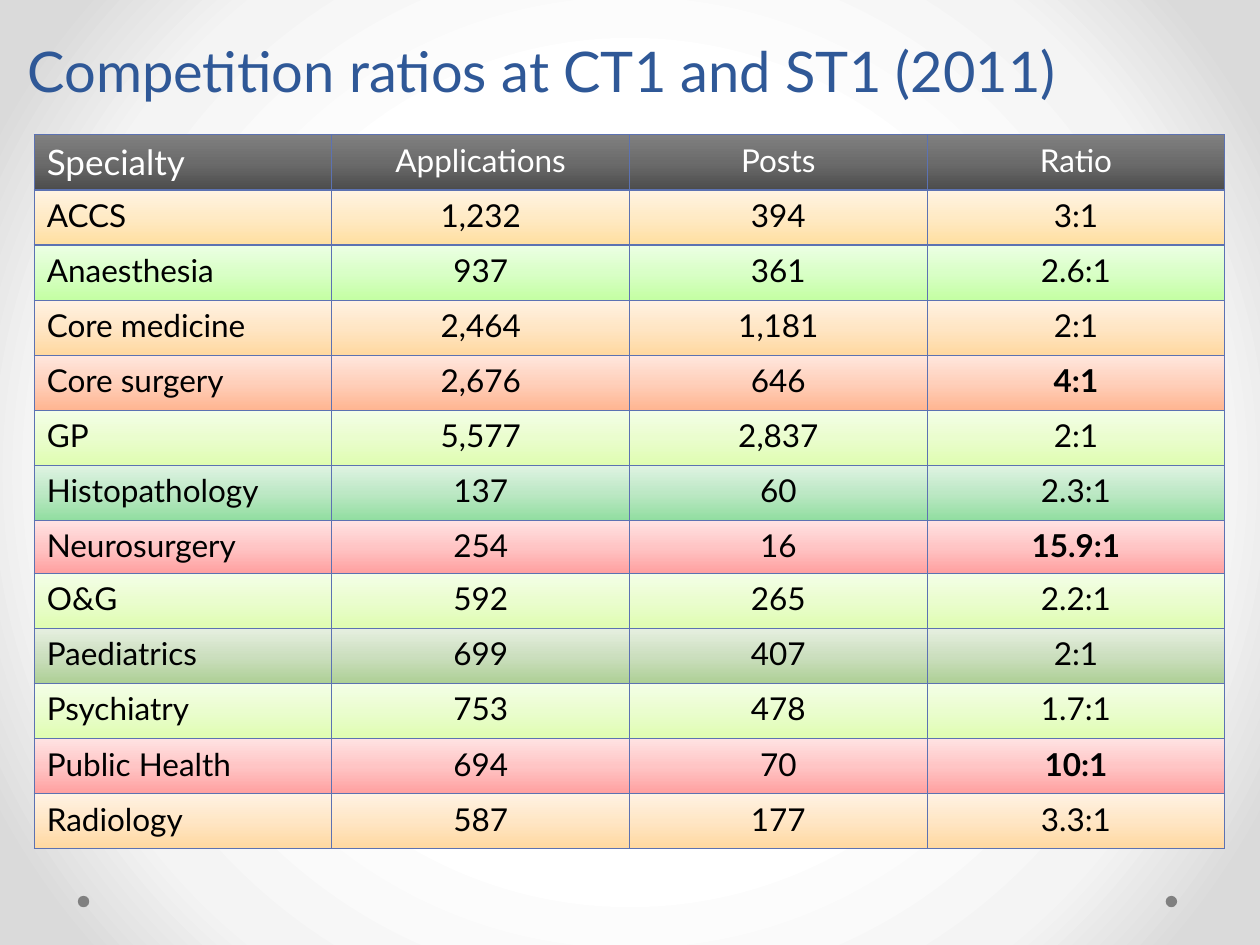
from lxml.etree import SubElement
from pptx import Presentation
from pptx.dml.color import RGBColor
from pptx.enum.shapes import MSO_SHAPE as Shape
from pptx.enum.text import MSO_ANCHOR as Anchor, MSO_AUTO_SIZE as AutoSize, PP_ALIGN as Align
from pptx.oxml.ns import qn
from pptx.util import Cm, Pt

WHITE = RGBColor(0xFF, 0xFF, 0xFF)
BLACK = RGBColor(0x00, 0x00, 0x00)
TITLE_BLUE = RGBColor(0x2F, 0x58, 0x97)
BORDER_BLUE = RGBColor(0x5C, 0x72, 0xB2)
DOT_GRAY = RGBColor(0x80, 0x80, 0x80)

BACKGROUND = ((50, WHITE), (76, RGBColor(0xF4, 0xF4, 0xF4)), (92, RGBColor(0xDA, 0xDA, 0xDA)))


def shades(dark, middle, light):
    return tuple(zip((0, 50, 100), map(RGBColor.from_string, (dark, middle, light))))


CHARCOAL = shades("4C4C4C", "6B6B6B", "808080")
AMBER = shades("FFDFA0", "FFEAC5", "FFF4E3")
GREEN = shades("C4FFA3", "D9FFC7", "ECFFE4")
PEACH = shades("FFD8A0", "FFE6C5", "FFF2E3")
SALMON = shades("FFB591", "FFD0BB", "FFE7DE")
LIME = shades("DFFDB1", "EAFDCE", "F4FEE7")
MINT = shades("91DEA0", "BDE8C5", "DFF3E3")
PINK = shades("FFA0A0", "FFC5C5", "FFE3E3")
SAGE = shades("ADCF95", "CCDFBF", "E6EFE0")

HEADINGS = ("Specialty", "Applications", "Posts", "Ratio")
SPECIALTIES = (
    (AMBER, "ACCS", "1,232", "394", "3:1"),
    (GREEN, "Anaesthesia", "937", "361", "2.6:1"),
    (PEACH, "Core medicine", "2,464", "1,181", "2:1"),
    (SALMON, "Core surgery", "2,676", "646", "4:1"),
    (LIME, "GP", "5,577", "2,837", "2:1"),
    (MINT, "Histopathology", "137", "60", "2.3:1"),
    (PINK, "Neurosurgery", "254", "16", "15.9:1"),
    (LIME, "O&G", "592", "265", "2.2:1"),
    (SAGE, "Paediatrics", "699", "407", "2:1"),
    (LIME, "Psychiatry", "753", "478", "1.7:1"),
    (PINK, "Public Health", "694", "70", "10:1"),
    (PEACH, "Radiology", "587", "177", "3.3:1"),
)
HIGH_RATIO = 4


def write_text(frame, text, font="Lato", size=18, color=BLACK, bold=False,
               align=Align.LEFT, line_spacing=None, before_percent=None):
    paragraph = frame.paragraphs[0]
    paragraph.alignment = align
    if line_spacing:
        paragraph.line_spacing = Pt(line_spacing)
    if before_percent:
        spacing = SubElement(paragraph._p.get_or_add_pPr(), qn("a:spcBef"))
        SubElement(spacing, qn("a:spcPct"), val=str(before_percent * 1000))
    run = paragraph.add_run()
    run.text = text
    run.font.name = font
    run.font.size = Pt(size)
    run.font.bold = bold
    run.font.color.rgb = color


def fill_gradient(fill, stops, circular=False):
    fill.gradient()
    gradient = fill._xPr.find(qn("a:gradFill"))
    for child in list(gradient):
        gradient.remove(child)
    stop_list = SubElement(gradient, qn("a:gsLst"))
    for position, color in stops:
        stop = SubElement(stop_list, qn("a:gs"), pos=str(position * 1000))
        SubElement(stop, qn("a:srgbClr"), val=str(color))
    if circular:
        direction = SubElement(gradient, qn("a:path"), path="circle")
        SubElement(direction, qn("a:fillToRect"), l="50000", t="50000", r="50000", b="50000")
    else:
        SubElement(gradient, qn("a:lin"), ang="16200000", scaled="0")


def draw_borders(cell, color, width):
    properties = cell._tc.get_or_add_tcPr()
    for side in ("a:lnL", "a:lnR", "a:lnT", "a:lnB"):
        line = SubElement(properties, qn(side), w=str(Pt(width)))
        solid = SubElement(line, qn("a:solidFill"))
        SubElement(solid, qn("a:srgbClr"), val=str(color))


class SlideBuilder:
    border_color = BORDER_BLUE
    border_width = 0.75
    before_percent = 20

    def __init__(self, slide):
        self.slide = slide

    def background(self, stops):
        fill_gradient(self.slide.background.fill, stops, circular=True)

    def title(self, text, left, top, width, height):
        title = self.slide.shapes.title
        title.left, title.top, title.width, title.height = map(Cm, (left, top, width, height))
        frame = title.text_frame
        frame.word_wrap = True
        frame.auto_size = AutoSize.NONE
        frame.vertical_anchor = Anchor.TOP
        write_text(frame, text, size=32, color=TITLE_BLUE, line_spacing=58)

    def dot(self, left, top, diameter):
        dot = self.slide.shapes.add_shape(
            Shape.OVAL, Cm(left), Cm(top), Cm(diameter), Cm(diameter))
        dot.shadow.inherit = False
        dot.fill.solid()
        dot.fill.fore_color.rgb = DOT_GRAY
        dot.line.fill.background()

    def cell(self, cell, text, stops, **text_format):
        draw_borders(cell, self.border_color, self.border_width)
        fill_gradient(cell.fill, stops)
        write_text(cell.text_frame, text, before_percent=self.before_percent, **text_format)

    def table(self, left, top, column_width, row_heights):
        columns = len(HEADINGS)
        table = self.slide.shapes.add_table(
            len(row_heights), columns, Cm(left), Cm(top),
            Cm(column_width * columns), Cm(sum(row_heights))).table
        table.first_row = False
        table.horz_banding = False
        for column in table.columns:
            column.width = Cm(column_width)
        for row, height in zip(table.rows, row_heights):
            row.height = Cm(height)
        for index, heading in enumerate(HEADINGS):
            self.cell(table.cell(0, index), heading, CHARCOAL, color=WHITE,
                      size=18 if index else 20, align=Align.CENTER if index else Align.LEFT)
        for row_index, (stops, *values) in enumerate(SPECIALTIES, 1):
            for index, value in enumerate(values):
                is_high = index == columns - 1 and float(value.split(":")[0]) >= HIGH_RATIO
                self.cell(table.cell(row_index, index), value, stops, bold=is_high,
                          align=Align.CENTER if index else Align.LEFT)


def main():
    presentation = Presentation()
    presentation.slide_width = Cm(25.4)
    presentation.slide_height = Cm(19.05)
    builder = SlideBuilder(presentation.slides.add_slide(presentation.slide_layouts[5]))
    builder.background(BACKGROUND)
    for left in (23.5, 1.57):
        builder.dot(left, 18.06, 0.23)
    builder.title("Competition ratios at CT1 and ST1 (2011)", 0.3, -0.08, 26.09, 3)
    row_heights = [1.07 if name == "Neurosurgery" else 1.11
                   for name in ("Specialty", *(row[1] for row in SPECIALTIES))]
    builder.table(0.69, 2.72, 6, row_heights)
    presentation.save("out.pptx")


if __name__ == "__main__":
    main()
